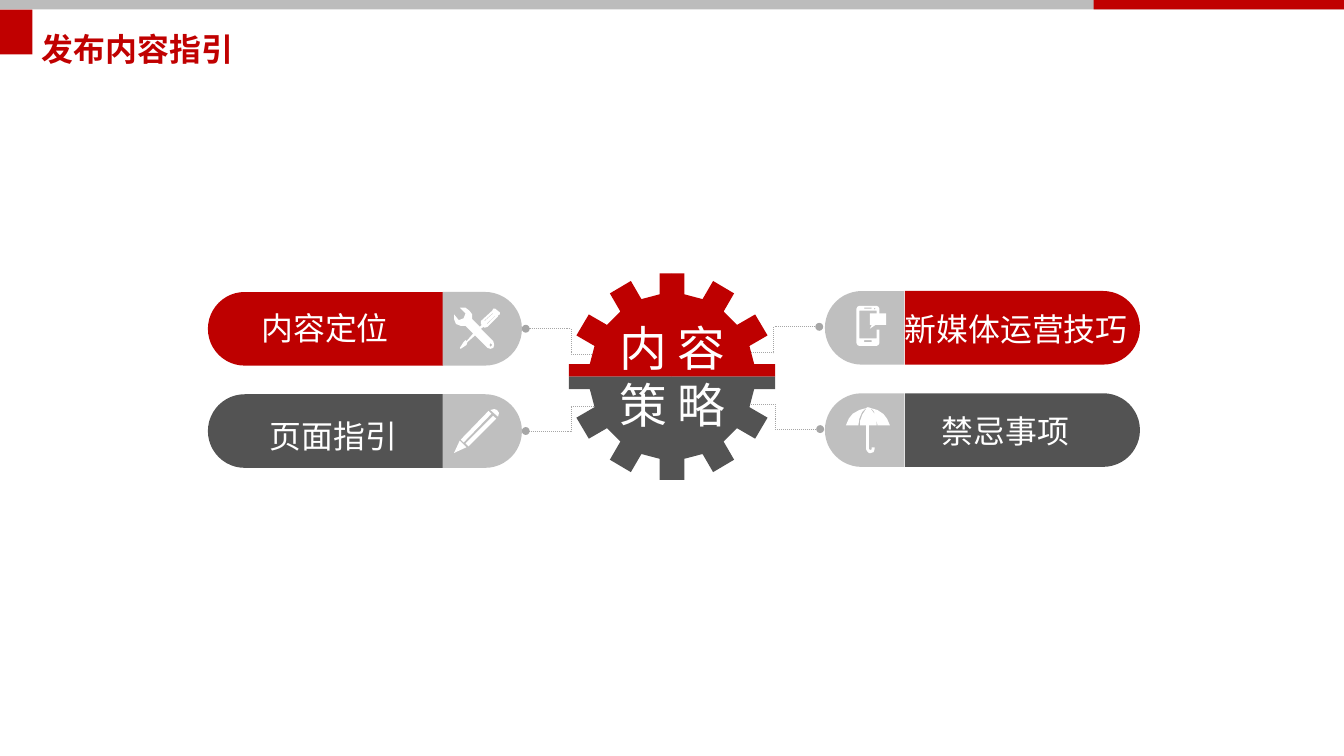
"""Build the content strategy slide: a gear hub linked to four labelled pills."""
import math
from dataclasses import dataclass

from lxml import etree
from pptx import Presentation
from pptx.dml.color import RGBColor
from pptx.enum import dml, shapes, text
from pptx.oxml import ns
from pptx.util import Emu, Pt

PX = 9144
RED, TITLE_RED, DARK = "BE0000", "C00000", "535353"
SILVER, BAR_GRAY, LINE_GRAY, WHITE = "BFBFBF", "BCBCBC", "A6A6A6", "FFFFFF"
CJK_FONT = "Noto Sans CJK SC"
GEAR_X, GEAR_Y = 703, 394
GEAR_RADIUS, ROOT_RADIUS, TOOTH_HALF = 108, 86, 13
PILL_HEIGHT, LABEL_LENGTH, CAP_LENGTH = 77, 246, 83

Point = tuple[int, int]
Contour = list[Point]


@dataclass(frozen=True)
class Pill:
    """A two-part pill, given by the centres of its label and icon ends."""
    label_x: float
    cap_x: float
    y: int
    fill: str
    label_turn: int


@dataclass(frozen=True)
class Label:
    """A text box with uniform lettering."""
    lines: tuple[str, ...]
    box: tuple[int, int, int, int]
    size: int = 24
    font: str = CJK_FONT
    color: str = WHITE
    bold: bool = False
    align: text.PP_ALIGN = text.PP_ALIGN.CENTER
    spacing: float = 1.0
    wrap: bool = True


@dataclass(frozen=True)
class Link:
    """A dotted elbow from the gear to a pill."""
    start: Point
    end: Point


@dataclass(frozen=True)
class Bar:
    """A plain header rectangle."""
    box: tuple[int, int, int, int]
    fill: str


LINKS = [
    Link((764, 423), (858, 449)),
    Link((762, 369), (857, 342)),
    Link((645, 425), (550, 451)),
    Link((645, 371), (550, 344)),
]
PILLS = [
    Pill(1069.5, 904.5, 343, RED, 90),
    Pill(1069.5, 904.5, 450, DARK, 90),
    Pill(340.5, 504.5, 344, RED, 270),
    Pill(340.5, 504.5, 451, DARK, 270),
]
BARS = [
    Bar((0, 0, 1406, 10), BAR_GRAY),
    Bar((1144, 0, 262, 10), TITLE_RED),
    Bar((0, 10, 34, 47), TITLE_RED),
]
LABELS = [
    Label(("内容定位",), (259, 322, 162, 46), spacing=0.9),
    Label(("页面指引",), (268, 436, 162, 46), spacing=0.9),
    Label(("新媒体运营技巧",), (934, 319, 258, 50)),
    Label(("禁忌事项",), (971, 426, 162, 50)),
    Label(("发布内容指引",), (34, 5, 354, 71), font="Roboto Condensed", color=TITLE_RED,
          bold=True, align=text.PP_ALIGN.LEFT, spacing=1.5),
    Label(("内 容", "策 略"), (638, 328, 131, 131), size=36, font="Calibri",
          align=text.PP_ALIGN.LEFT, wrap=False),
]
TOOLS: list[Contour] = [
    [(523, 327), (518, 323), (516, 323), (515, 325), (503, 336), (503, 339), (504, 340),
     (502, 342), (494, 334), (494, 329), (491, 325), (487, 322), (481, 322), (487, 328),
     (485, 333), (480, 335), (475, 329), (475, 334), (477, 339), (482, 341), (487, 341),
     (495, 349), (488, 357), (487, 356), (485, 358), (481, 364), (482, 365), (488, 361),
     (489, 358), (497, 351), (510, 364), (513, 365), (516, 364), (517, 361), (516, 357),
     (503, 344), (506, 342), (507, 343), (510, 342), (521, 331), (521, 330), (523, 329)],
    [(513, 359), (515, 361), (513, 363), (512, 361)],
    [(507, 336), (506, 336), (515, 328), (516, 328)],
    [(510, 339), (509, 339), (518, 330), (518, 331)],
]
PENCIL: list[list[Contour]] = [
    [[(481, 461), (475, 474), (488, 468)]],
    [[(511, 430), (482, 460), (485, 463), (514, 433)]],
    [[(516, 435), (487, 464), (490, 467), (519, 438)]],
    [[(513, 429), (517, 428), (520, 429), (522, 432), (521, 436)]],
]
PHONE: list[Contour] = [
    [(917, 354), (899, 354), (899, 325), (917, 325), (917, 331), (920, 331), (920, 323),
     (919, 321), (917, 320), (899, 320), (897, 321), (896, 323), (896, 359), (897, 361),
     (899, 362), (917, 362), (919, 361), (920, 359), (920, 345), (917, 345)],
    [(915, 322), (916, 323), (915, 324), (914, 323)],
    [(904, 322), (912, 322), (912, 323), (904, 323)],
    [(912, 358), (904, 358), (904, 356), (912, 356)],
]
BUBBLE: list[Contour] = [
    [(910, 340), (912, 340), (910, 344), (916, 340), (927, 340), (927, 328), (910, 328)],
]
UMBRELLA: list[Contour] = [
    [(931, 445), (928, 438), (924, 433), (918, 429), (911, 427), (908, 426), (906, 427),
     (899, 429), (892, 433), (888, 438), (885, 445), (898, 445), (899, 438), (902, 431),
     (906, 427), (906, 428), (902, 434), (900, 440), (900, 445), (906, 445), (906, 470),
     (907, 472), (909, 474), (911, 474), (914, 473), (915, 470), (915, 468), (912, 468),
     (912, 470), (911, 471), (909, 470), (909, 445), (917, 445), (917, 438), (915, 433),
     (911, 428), (911, 427), (914, 430), (917, 437), (918, 445)],
]
ICONS = [TOOLS, *PENCIL, PHONE, BUBBLE, UMBRELLA]


def px(length: float) -> Emu:
    """Turn px into EMU."""
    return Emu(round(length * PX))


def rgb(color: str) -> RGBColor:
    """Turn a hex string into a colour."""
    return RGBColor.from_string(color)


def paint(shape, fill: str) -> None:
    """Give a shape a flat fill without line or shadow."""
    shape.shadow.inherit = False
    shape.fill.solid()
    shape.fill.fore_color.rgb = rgb(fill)
    shape.line.fill.background()


def draw_outline(slide, contours: list[Contour], fill: str) -> None:
    """Draw closed contours as one shape."""
    first, *holes = contours
    builder = slide.shapes.build_freeform(*first[0], scale=PX)
    builder.add_line_segments(first[1:], close=True)
    for hole in holes:
        builder.move_to(*hole[0])
        builder.add_line_segments(hole[1:], close=True)
    paint(builder.convert_to_shape(), fill)


def draw_bar(slide, bar: Bar) -> None:
    """Draw a header rectangle."""
    shape = slide.shapes.add_shape(shapes.MSO_SHAPE.RECTANGLE, *map(px, bar.box))
    paint(shape, bar.fill)


def draw_link(slide, link: Link) -> None:
    """Draw a dotted elbow with round ends."""
    connector = slide.shapes.add_connector(
        shapes.MSO_CONNECTOR.ELBOW, *map(px, link.start + link.end))
    connector.line.color.rgb = rgb(LINE_GRAY)
    connector.line.width = Pt(0.75)
    connector.line.dash_style = dml.MSO_LINE.ROUND_DOT
    line = connector.line._get_or_add_ln()
    for end in ("a:headEnd", "a:tailEnd"):
        etree.SubElement(line, ns.qn(end), type="oval")
    etree.SubElement(connector._element.spPr, ns.qn("a:effectLst"))


def draw_half(slide, x: float, y: int, length: int, fill: str, turn: int) -> None:
    """Draw one rounded end of a pill around its centre."""
    shape = slide.shapes.add_shape(
        shapes.MSO_SHAPE.ROUND_2_SAME_RECTANGLE, px(x - PILL_HEIGHT / 2),
        px(y - length / 2), px(PILL_HEIGHT), px(length))
    shape.adjustments[0], shape.adjustments[1] = 0.5, 0
    shape.rotation = turn
    paint(shape, fill)


def draw_pill(slide, pill: Pill) -> None:
    """Draw the label end and the icon end of a pill."""
    draw_half(slide, pill.label_x, pill.y, LABEL_LENGTH, pill.fill, pill.label_turn)
    draw_half(slide, pill.cap_x, pill.y, CAP_LENGTH, SILVER, 360 - pill.label_turn)


def draw_gear_quarter(slide, side: int, rise: int, fill: str) -> None:
    """Draw a quarter of the twelve-toothed gear."""
    profile = []
    for degrees in range(0, 91, 30):
        sine, cosine = math.sin(math.radians(degrees)), math.cos(math.radians(degrees))
        corners = [(-TOOTH_HALF, ROOT_RADIUS), (-TOOTH_HALF, GEAR_RADIUS),
                   (TOOTH_HALF, GEAR_RADIUS), (TOOTH_HALF, ROOT_RADIUS)]
        profile += [(r * sine + w * cosine, r * cosine - w * sine) for w, r in corners]
    profile = [(0, 0), (0, GEAR_RADIUS), *profile[2:-2], (GEAR_RADIUS, 0)]
    contour = [(round(GEAR_X + side * x), round(GEAR_Y + rise * y)) for x, y in profile]
    draw_outline(slide, [contour], fill)


def draw_label(slide, label: Label) -> None:
    """Draw a text box, one paragraph per line."""
    frame = slide.shapes.add_textbox(*map(px, label.box)).text_frame
    frame.word_wrap = label.wrap
    frame.vertical_anchor = text.MSO_ANCHOR.MIDDLE
    for index, line in enumerate(label.lines):
        paragraph = frame.add_paragraph() if index else frame.paragraphs[0]
        paragraph.alignment, paragraph.line_spacing = label.align, label.spacing
        run = paragraph.add_run()
        run.text = line
        font = run.font
        font.name, font.size, font.bold = label.font, Pt(label.size), label.bold
        font.color.rgb = rgb(label.color)
        etree.SubElement(run._r.get_or_add_rPr(), ns.qn("a:ea"), typeface=label.font)


def main() -> None:
    """Assemble and save the slide."""
    presentation = Presentation()
    presentation.slide_width, presentation.slide_height = px(1406), px(791)
    slide = presentation.slides.add_slide(presentation.slide_layouts[6])
    for link in LINKS:
        draw_link(slide, link)
    for pill in PILLS:
        draw_pill(slide, pill)
    for rise, fill in ((-1, RED), (1, DARK)):
        for side in (-1, 1):
            draw_gear_quarter(slide, side, rise, fill)
    for icon in ICONS:
        draw_outline(slide, icon, WHITE)
    for bar in BARS:
        draw_bar(slide, bar)
    for label in LABELS:
        draw_label(slide, label)
    presentation.save("out.pptx")


if __name__ == "__main__":
    main()
